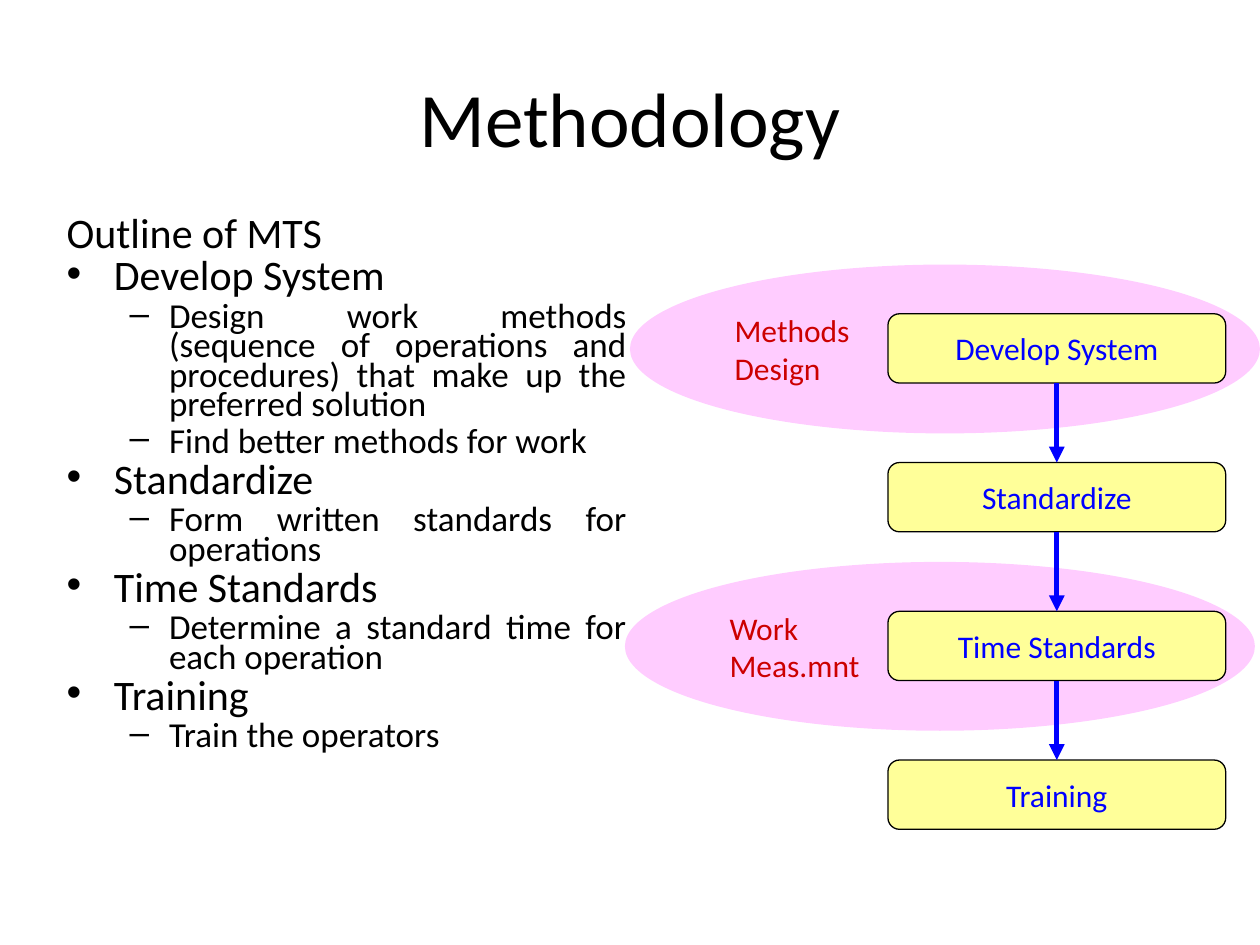
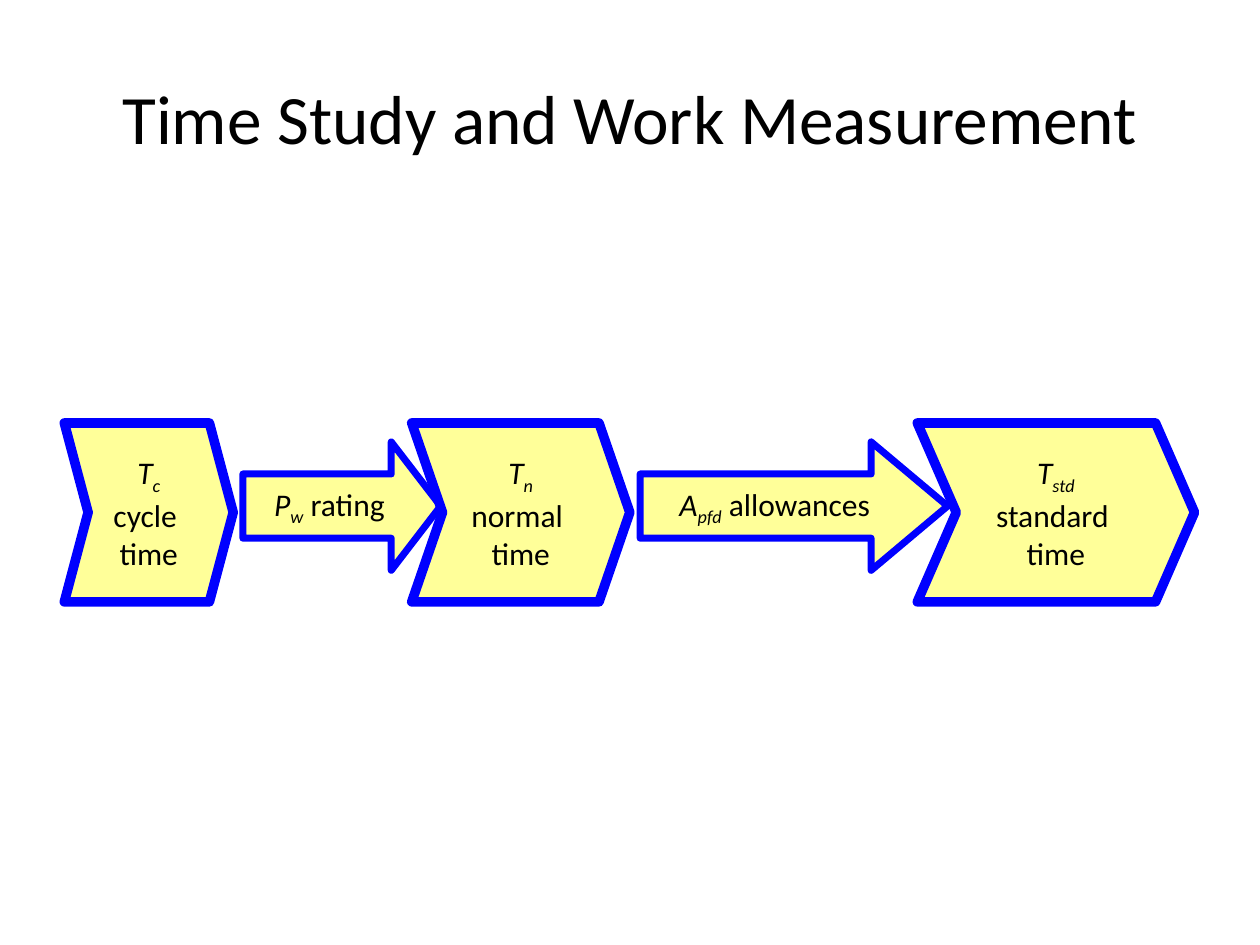
import pptx
import pptx.util
import pptx.dml.color
import pptx.enum.shapes
import pptx.enum.text
import pptx.oxml
import pptx.oxml.ns
from lxml import etree

Pt = pptx.util.Pt
SHAPE = pptx.enum.shapes.MSO_SHAPE
ALIGN = pptx.enum.text.PP_ALIGN
ANCHOR = pptx.enum.text.MSO_ANCHOR
FONT = "Calibri"
BLACK, BLUE, RED = "000000", "0000FF", "CC0000"
YELLOW, MAGENTA = "FFFF99", "FF00FF"
PLAIN = {}
SYMBOL = {"italic": True}
SUBSCRIPT = {"italic": True, "baseline": -25000}


def colour(value):
    return pptx.dml.color.RGBColor.from_string(value)


def set_all(target, values):
    for name, value in values.items():
        setattr(target, name, value)


def add_child(parent, tag, **attributes):
    child = etree.SubElement(parent, pptx.oxml.ns.qn(tag))
    for name, value in attributes.items():
        child.set(name, str(value))
    return child


def add_span(para, text, size, tint, style=PLAIN):
    span = para.add_run()
    span.text = text
    set_all(span.font, {"name": FONT, "size": Pt(size), "italic": style.get("italic", False)})
    span.font.color.rgb = colour(tint)
    if "baseline" in style:
        span.font._element.set("baseline", str(style["baseline"]))


def write_lines(frame, lines, size, tint, align):
    for index, line in enumerate(lines):
        para = frame.add_paragraph() if index else frame.paragraphs[0]
        para.alignment = align
        for text, style in line:
            add_span(para, text, size, tint, style)


def add_text_box(page, box):
    frame = page.shapes.add_textbox(*map(Pt, box)).text_frame
    frame.word_wrap = True
    return frame


def add_figure(page, kind, box, fill, lines, tint, align=ALIGN.CENTER, outline=None, adjust=()):
    figure = page.shapes.add_shape(kind, *map(Pt, box))
    figure.shadow.inherit = False
    for index, value in enumerate(adjust):
        figure.adjustments[index] = value
    figure.fill.solid()
    figure.fill.fore_color.rgb = colour(fill)
    if outline:
        figure.line.color.rgb = colour(outline[0])
        figure.line.width = Pt(outline[1])
    else:
        figure.line.fill.background()
    set_all(figure.text_frame, {"word_wrap": False, "vertical_anchor": ANCHOR.MIDDLE})
    write_lines(figure.text_frame, lines, 18, tint, align)
    return figure


def add_title(page, text, size):
    frame = add_text_box(page, (36, 21.6, 648, 90))
    frame.vertical_anchor = ANCHOR.MIDDLE
    write_lines(frame, [[(text, PLAIN)]], size, BLACK, ALIGN.CENTER)


def add_outline(page, box, items):
    levels = {
        "heading": {"size": 24, "left": 27, "hang": 27, "mark": None},
        "topic": {"size": 24, "left": 27, "hang": 27, "mark": "•"},
        "detail": {"size": 20, "left": 58.5, "hang": 22.5, "mark": "–"},
    }
    frame = add_text_box(page, box)
    for index, (level, text) in enumerate(items):
        look = levels[level]
        para = frame.add_paragraph() if index else frame.paragraphs[0]
        set_all(para, {"alignment": ALIGN.JUSTIFY, "line_spacing": 0.7, "space_before": Pt(4)})
        props = para._p.get_or_add_pPr()
        props.set("marL", str(Pt(look["left"])))
        props.set("indent", str(-Pt(look["hang"])))
        if look["mark"]:
            add_child(props, "a:buFont", typeface="Arial")
            add_child(props, "a:buChar", char=look["mark"])
        add_span(para, text, look["size"], BLACK)


def add_halo(page, box, words):
    lines = [[(word, PLAIN)] for word in words]
    halo = add_figure(page, SHAPE.OVAL, box, MAGENTA, lines, RED, ALIGN.LEFT)
    tint = halo.fill._xPr.find(".//" + pptx.oxml.ns.qn("a:srgbClr"))
    add_child(tint, "a:alpha", val=20000)


def join_steps(page, upper, lower):
    middle = upper.left + upper.width // 2
    arrow = page.shapes.add_connector(
        pptx.enum.shapes.MSO_CONNECTOR.STRAIGHT,
        middle, upper.top + upper.height, middle, lower.top)
    arrow.begin_connect(upper, 2)
    arrow.end_connect(lower, 0)
    arrow.line.color.rgb = colour(BLUE)
    arrow.line.width = Pt(3)
    add_child(arrow.line._get_or_add_ln(), "a:tailEnd", type="triangle")
    add_child(arrow._element.spPr, "a:effectLst")


def add_step_boxes(page, box, names):
    left, top, width, height = box
    step_height = 39.6
    pitch = (height - step_height) / (len(names) - 1)
    steps = [
        add_figure(page, SHAPE.ROUNDED_RECTANGLE,
                   (left, top + index * pitch, width, step_height), YELLOW,
                   [[(name, PLAIN)]], BLUE, outline=(BLACK, 0.75), adjust=(0.167,))
        for index, name in enumerate(names)]
    for upper, lower in zip(steps, steps[1:]):
        join_steps(page, upper, lower)


def add_time_flow(page, box, parts):
    left, top, width, height = box
    arrow_height = 73.4
    for kind, offset, part_width, point, lines in parts:
        if kind == "time":
            part_box = (left + offset, top, part_width, height)
            add_figure(page, SHAPE.CHEVRON, part_box, YELLOW, lines, BLACK,
                       outline=(BLUE, 5.5), adjust=(point,))
        else:
            part_box = (left + offset, top + 10.8, part_width, arrow_height)
            add_figure(page, SHAPE.RIGHT_ARROW, part_box, YELLOW, lines, BLACK,
                       outline=(BLUE, 4), adjust=(0.5, point))


def symbol(letter, index):
    return [(letter, SYMBOL), (index, SUBSCRIPT)]


def time_lines(index, name):
    return [symbol("T", index), [(name + " ", PLAIN)], [("time", PLAIN)]]


def factor_line(letter, index, name):
    return [symbol(letter, index) + [(" " + name, PLAIN)]]


def build_methodology(page):
    add_halo(page, (357.1, 321.1, 360, 96.5), ["Work", "Meas.mnt"])
    add_halo(page, (360, 151.2, 360, 96.5), ["Methods", "Design"])
    add_title(page, "Methodology", 44)
    add_outline(page, (31, 122.4, 334.1, 357.1), [
        ("heading", "Outline of MTS"),
        ("topic", "Develop System"),
        ("detail", "Design work methods (sequence of operations and procedures) "
                   "that make up the preferred solution"),
        ("detail", "Find better methods for work"),
        ("topic", "Standardize"),
        ("detail", "Form written standards for operations"),
        ("topic", "Time Standards"),
        ("detail", "Determine a standard time for each operation"),
        ("topic", "Training"),
        ("detail", "Train the operators"),
    ])
    add_step_boxes(page, (507.4, 179.3, 193, 294.6),
                   ["Develop System", "Standardize", "Time Standards", "Training"])


def build_time_study(page):
    add_title(page, "Time Study and Work Measurement", 39.6)
    add_time_flow(page, (36.8, 241.7, 646, 102.2), [
        ("factor", 102, 113, 0.384, factor_line("P", "w", "rating")),
        ("time", 0, 96.5, 0.141, time_lines("c", "cycle")),
        ("time", 198.5, 124.6, 0.172, time_lines("n", "normal")),
        ("factor", 329, 175.7, 0.595, factor_line("A", "pfd", "allowances")),
        ("time", 487.4, 158.4, 0.218, time_lines("std", "standard")),
    ])


def main():
    deck = pptx.Presentation()
    set_all(deck, {"slide_width": Pt(720), "slide_height": Pt(540)})
    for build in (build_methodology, build_time_study):
        build(deck.slides.add_slide(deck.slide_layouts[6]))
    deck.save("out.pptx")


if __name__ == "__main__":
    main()
